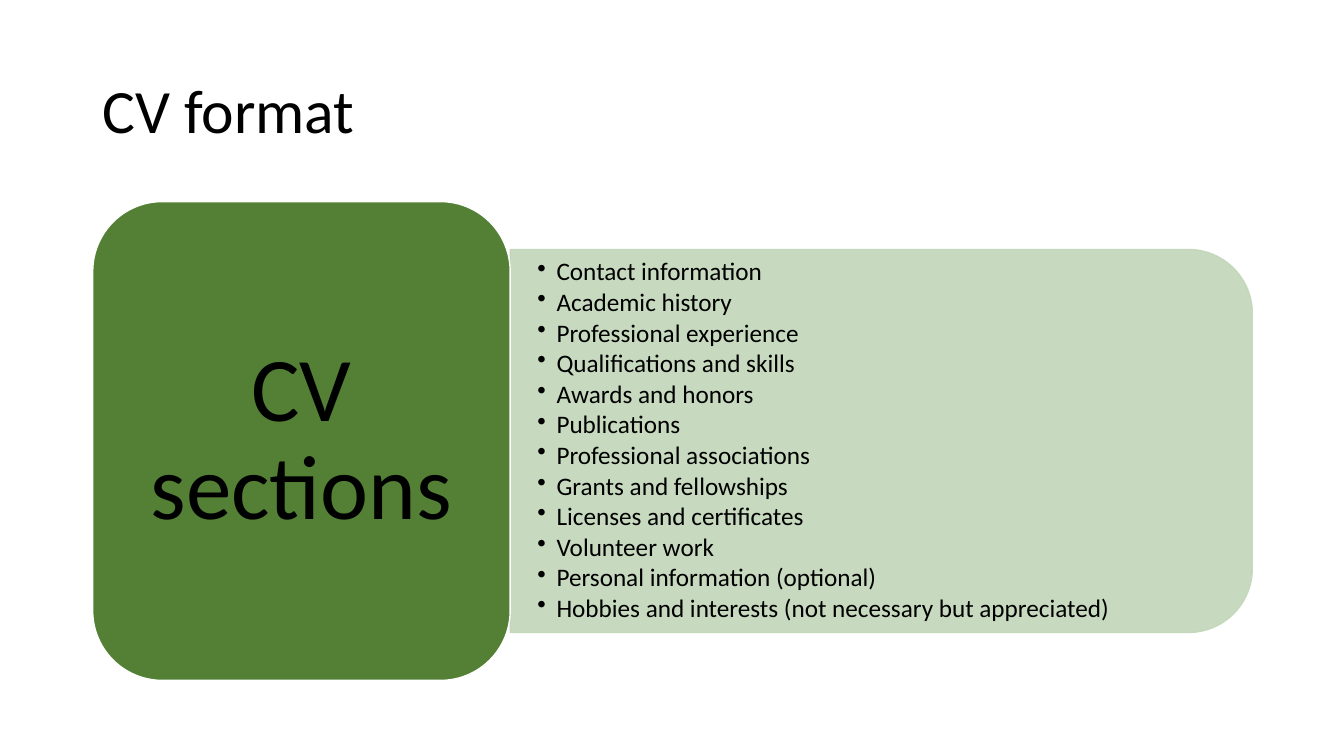
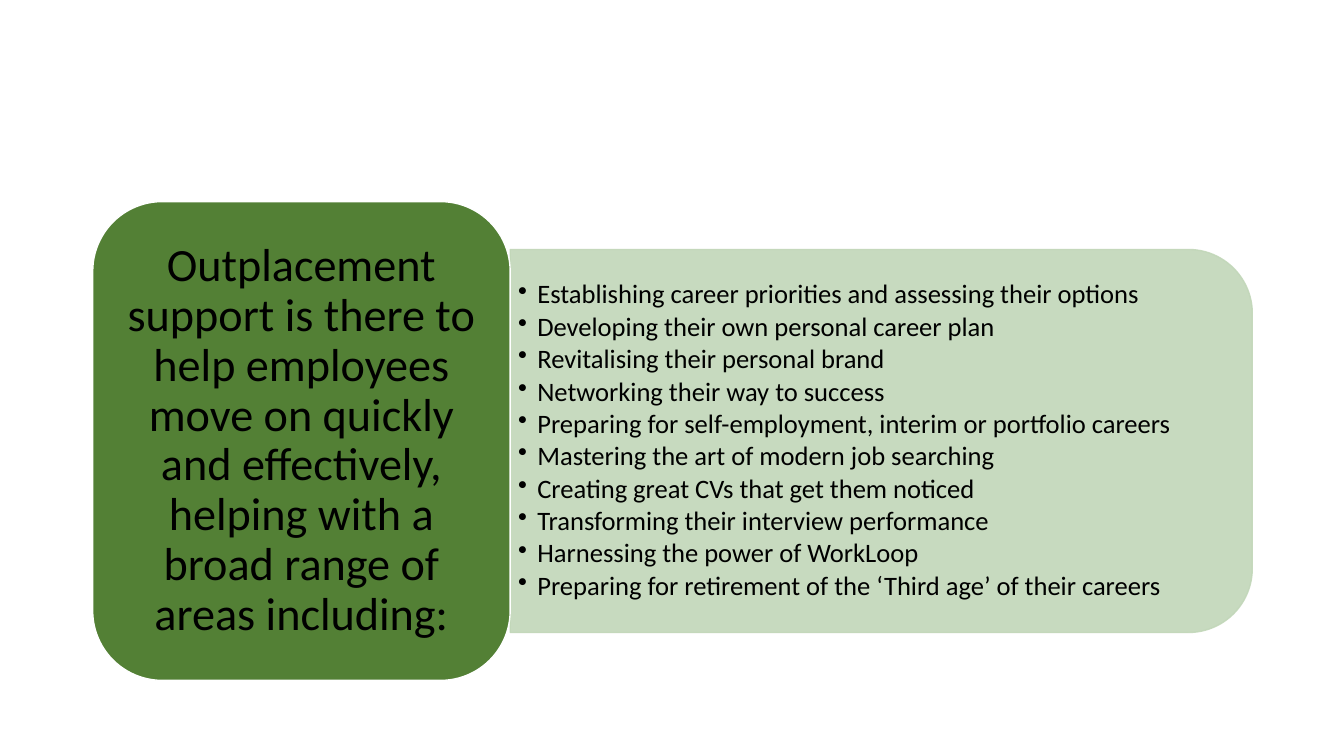
from lxml import etree
from pptx import Presentation
from pptx.dml.color import RGBColor
from pptx.enum.shapes import MSO_SHAPE
from pptx.enum.text import MSO_ANCHOR, PP_ALIGN
from pptx.oxml.ns import qn
from pptx.util import Inches, Pt

FONT = "Calibri"
BLACK, WHITE, GREEN, PALE = "000000", "FFFFFF", "538035", "C2D7B9"
TITLE = (0.92, 0.4, 11.5, 1.45)
BODY = (0.92, 2, 11.5, 4.75)
SPACING = 0.9

SECTIONS = [
    "Contact information",
    "Academic history",
    "Professional experience",
    "Qualifications and skills",
    "Awards and honors",
    "Publications",
    "Professional associations",
    "Grants and fellowships",
    "Licenses and certificates",
    "Volunteer work",
    "Personal information (optional)",
    "Hobbies and interests (not necessary but appreciated)",
]
SUPPORT = [
    "Establishing career priorities and assessing their options",
    "Developing their own personal career plan",
    "Revitalising their personal brand",
    "Networking their way to success",
    "Preparing for self-employment, interim or portfolio careers",
    "Mastering the art of modern job searching",
    "Creating great CVs that get them noticed",
    "Transforming their interview performance",
    "Harnessing the power of WorkLoop",
    "Preparing for retirement of the ‘Third age’ of their careers",
]
OFFER = ("Outplacement support is there to help employees move on quickly "
         "and effectively, helping with a broad range of areas including:")


def paint(color, code, alpha=None):
    """Set a solid fill colour, with opacity in percent if given."""
    color.solid()
    color.fore_color.rgb = RGBColor.from_string(code)
    if alpha:
        for tint in color._xPr.iter(qn("a:srgbClr")):
            etree.SubElement(tint, qn("a:alpha"), val=str(alpha * 1000))


def add_block(slide, kind, box, fill, line, alpha=None):
    shape = slide.shapes.add_shape(kind, *map(Inches, box))
    shape.shadow.inherit = False
    paint(shape.fill, fill, alpha)
    paint(shape.line.fill, line, alpha)
    shape.line.width = Pt(1)
    return shape


def write(shape, lines, size, pad=(0.1, 0.05), align=PP_ALIGN.LEFT,
          gap=0, bullet=False):
    """Fill a frame; gap is the space after, as a share of the line."""
    frame = shape.text_frame
    frame.word_wrap = True
    frame.vertical_anchor = MSO_ANCHOR.MIDDLE
    frame.margin_left = frame.margin_right = Inches(pad[0])
    frame.margin_top = frame.margin_bottom = Inches(pad[1])
    for i, line in enumerate(lines):
        para = frame.add_paragraph() if i else frame.paragraphs[0]
        para.alignment = align
        para.line_spacing = SPACING
        para.space_after = Pt(round(size * SPACING * gap, 1))
        if bullet:
            para.level = 1
            props = para._p.get_or_add_pPr()
            props.set("marL", str(Inches(0.19)))
            props.set("indent", str(-Inches(0.19)))
            etree.SubElement(props, qn("a:buChar"), char="•")
        run = para.add_run()
        run.text = line
        run.font.name = FONT
        run.font.size = Pt(size)
        run.font.color.rgb = RGBColor.from_string(BLACK)


def add_title(slide, text):
    write(slide.shapes.add_textbox(*map(Inches, TITLE)), [text], 44)


def add_panel(slide, box, items, size, pad):
    """Pale panel, rounded on the right, with a bullet list."""
    left, top, width, height = box
    # A quarter turn brings the rounded top to the right
    shift = (width - height) / 2
    shape = add_block(slide, MSO_SHAPE.ROUND_2_SAME_RECTANGLE,
                      (left + shift, top - shift, height, width),
                      PALE, PALE, 90)
    shape.rotation = 90
    inset = 0.19
    area = (left, top + inset, width - inset, height - 2 * inset)
    write(slide.shapes.add_textbox(*map(Inches, area)), items, size, pad,
          gap=0.15, bullet=True)


def add_label(slide, box, text, size, pad):
    shape = add_block(slide, MSO_SHAPE.ROUNDED_RECTANGLE, box, GREEN, WHITE)
    write(shape, [text], size, pad, PP_ALIGN.CENTER, gap=0.35)


def add_list(deck, label, label_size, label_pad, items, size, pad, title=None):
    """Slide with a label on the left and its list on the right."""
    slide = deck.slides.add_slide(deck.slide_layouts[6])
    if title:
        add_title(slide, title)
    left, top, width, height = BODY
    split = 0.36 * width
    add_panel(slide, (left + split, top + 0.1 * height,
                      width - split, 0.8 * height), items, size, pad)
    add_label(slide, (left, top, split, height), label, label_size, label_pad)


def main():
    deck = Presentation()
    deck.slide_width, deck.slide_height = Inches(13.33), Inches(7.5)
    add_list(deck, "CV sections", 65, (0.27, 0.14),
             SECTIONS, 18, (0.27, 0.14), "CV format")
    add_list(deck, OFFER, 33, (0.14, 0.07), SUPPORT, 19, (0.08, 0.04))
    deck.save("out.pptx")


if __name__ == "__main__":
    main()
